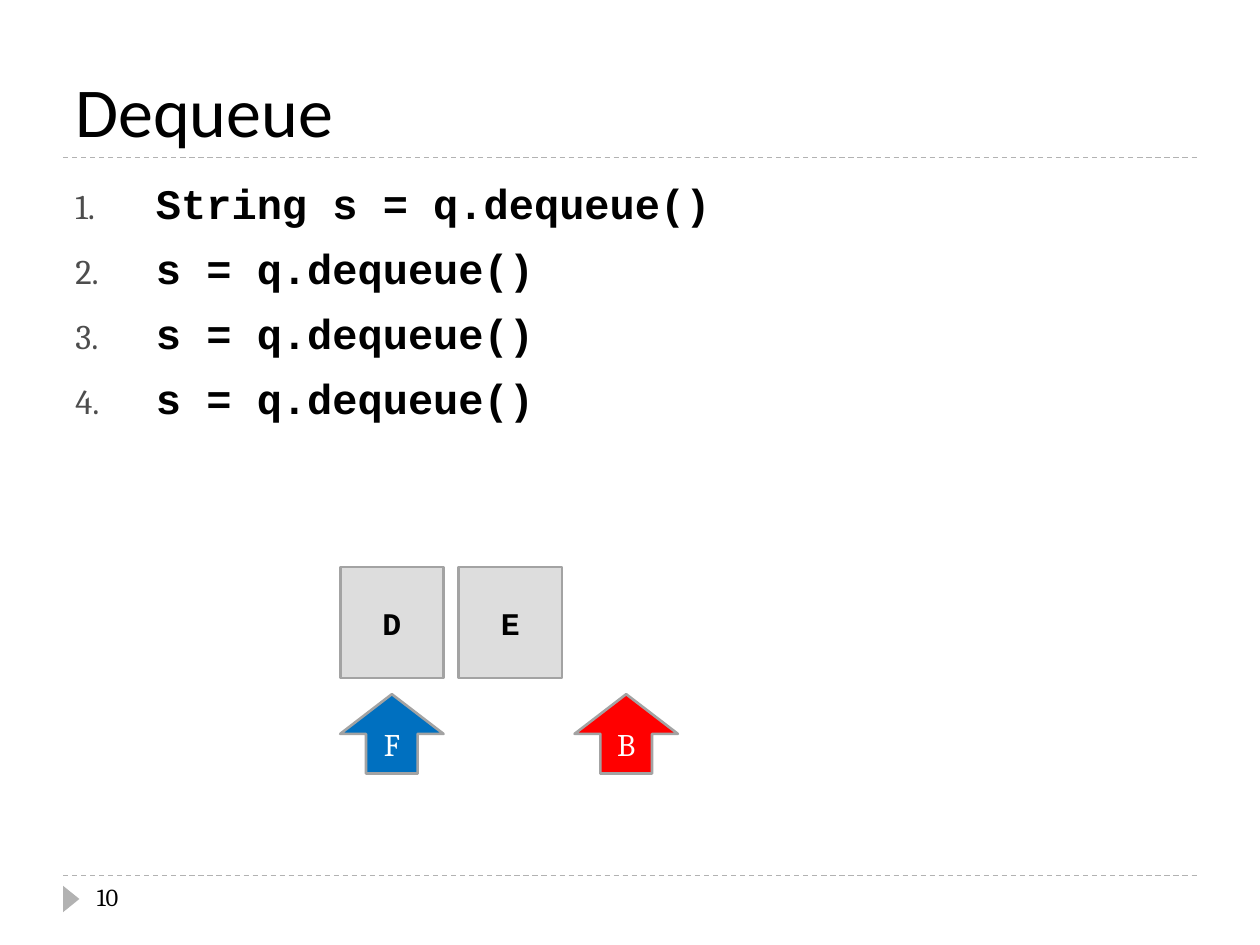
from typing import NamedTuple

from lxml import etree
from pptx import Presentation
from pptx import util as u
from pptx.dml.color import RGBColor
from pptx.enum import dml, shapes, text
from pptx.oxml.ns import qn

BLACK = RGBColor(0x00, 0x00, 0x00)
WHITE = RGBColor(0xFF, 0xFF, 0xFF)
RULE_GRAY = RGBColor(0xB2, 0xB2, 0xB2)
EDGE_GRAY = RGBColor(0xA3, 0xA3, 0xA3)
CELL_GRAY = RGBColor(0xDD, 0xDD, 0xDD)
FRONT_BLUE = RGBColor(0x00, 0x70, 0xC0)
BACK_RED = RGBColor(0xFF, 0x00, 0x00)
NUMBER_COLOR = "4D4D4D"

CODE_FONT = "Courier New"
BODY_FONT = "Cambria"
CELL_LEFT, CELL_WIDTH, CELL_PITCH = 2.7, 0.82, 0.94


class Node(NamedTuple):
    label: str
    left: float
    top: float
    height: float
    kind: shapes.MSO_SHAPE
    fill: RGBColor
    font: str
    color: RGBColor
    bold: bool


def cell(label: str, index: int) -> Node:
    return Node(label, CELL_LEFT + index * CELL_PITCH, 4.5, 0.88,
                shapes.MSO_SHAPE.RECTANGLE, CELL_GRAY, CODE_FONT, BLACK, True)


def pointer(label: str, left: float, fill: RGBColor) -> Node:
    return Node(label, left, 5.51, 0.63, shapes.MSO_SHAPE.UP_ARROW,
                fill, BODY_FONT, WHITE, False)


NODES = [
    cell("D", 0),
    cell("E", 1),
    pointer("F", CELL_LEFT, FRONT_BLUE),
    pointer("B", 4.56, BACK_RED),
]
CODE_LINES = ["String s = q.dequeue()"] + ["s = q.dequeue()"] * 3


def add_span(para, words: str, *, size: float, font: str = BODY_FONT,
             color: RGBColor = BLACK, bold: bool = False) -> None:
    span = para.add_run()
    span.text = words
    span.font.size = u.Pt(size)
    span.font.name = font
    span.font.color.rgb = color
    span.font.bold = bold


def add_box(page, left: float, top: float, width: float, height: float,
            anchor=text.MSO_ANCHOR.TOP):
    box = page.shapes.add_textbox(*map(u.Inches, (left, top, width, height)))
    box.text_frame.word_wrap = True
    box.text_frame.vertical_anchor = anchor
    return box.text_frame


def add_rule(page, top: float) -> None:
    rule = page.shapes.add_connector(
        shapes.MSO_CONNECTOR.STRAIGHT,
        u.Inches(0.5), u.Inches(top), u.Inches(9.5), u.Inches(top))
    rule.line.color.rgb = RULE_GRAY
    rule.line.width = u.Pt(0.75)
    rule.line.dash_style = dml.MSO_LINE.DASH
    etree.SubElement(rule._element.spPr, qn("a:effectLst"))


def add_shape(page, kind, left: float, top: float, width: float,
              height: float, fill: RGBColor):
    shape = page.shapes.add_shape(
        kind, *map(u.Inches, (left, top, width, height)))
    shape.shadow.inherit = False
    shape.fill.solid()
    shape.fill.fore_color.rgb = fill
    return shape


def add_node(page, node: Node) -> None:
    shape = add_shape(page, node.kind, node.left, node.top,
                      CELL_WIDTH, node.height, node.fill)
    shape.line.color.rgb = EDGE_GRAY
    shape.line.width = u.Pt(1.5)
    shape.text_frame.vertical_anchor = text.MSO_ANCHOR.MIDDLE
    para = shape.text_frame.paragraphs[0]
    para.alignment = text.PP_ALIGN.CENTER
    add_span(para, node.label, size=18, font=node.font,
             color=node.color, bold=node.bold)


def number_para(para) -> None:
    para.space_before = u.Pt(6)
    props = para._p.get_or_add_pPr()
    props.set("marL", str(u.Inches(0.56)))
    props.set("indent", str(-u.Inches(0.56)))
    tint = etree.SubElement(props, qn("a:buClr"))
    etree.SubElement(tint, qn("a:srgbClr"), val=NUMBER_COLOR)
    etree.SubElement(props, qn("a:buSzPct"), val="76000")
    etree.SubElement(props, qn("a:buFont"), typeface=BODY_FONT)
    etree.SubElement(props, qn("a:buAutoNum"), type="arabicPeriod")


def main() -> None:
    deck = Presentation()
    deck.slide_width, deck.slide_height = u.Inches(10), u.Inches(7.5)
    page = deck.slides.add_slide(deck.slide_layouts[6])

    # Rules and footer marker
    for top in (6.95, 1.25):
        add_rule(page, top)
    marker = add_shape(page, shapes.MSO_SHAPE.ISOSCELES_TRIANGLE,
                       0.46, 7.07, 0.21, 0.13, RULE_GRAY)
    marker.rotation = 90
    marker.line.fill.background()

    # Title
    title = add_box(page, 0.5, 0.17, 9, 1.08, text.MSO_ANCHOR.BOTTOM)
    add_span(title.paragraphs[0], "Dequeue", size=40, font="Calibri")

    # Numbered code lines
    body = add_box(page, 0.5, 1.33, 9, 5.4)
    for index, code in enumerate(CODE_LINES):
        para = body.add_paragraph() if index else body.paragraphs[0]
        number_para(para)
        add_span(para, " ", size=26)
        add_span(para, code, size=24, font=CODE_FONT, bold=True)

    # Page number
    footer = add_box(page, 0.67, 6.95, 2.17, 0.4)
    add_span(footer.paragraphs[0], "10", size=14)

    # Queue cells with front and back pointers
    for node in NODES:
        add_node(page, node)

    deck.save("out.pptx")


if __name__ == "__main__":
    main()
